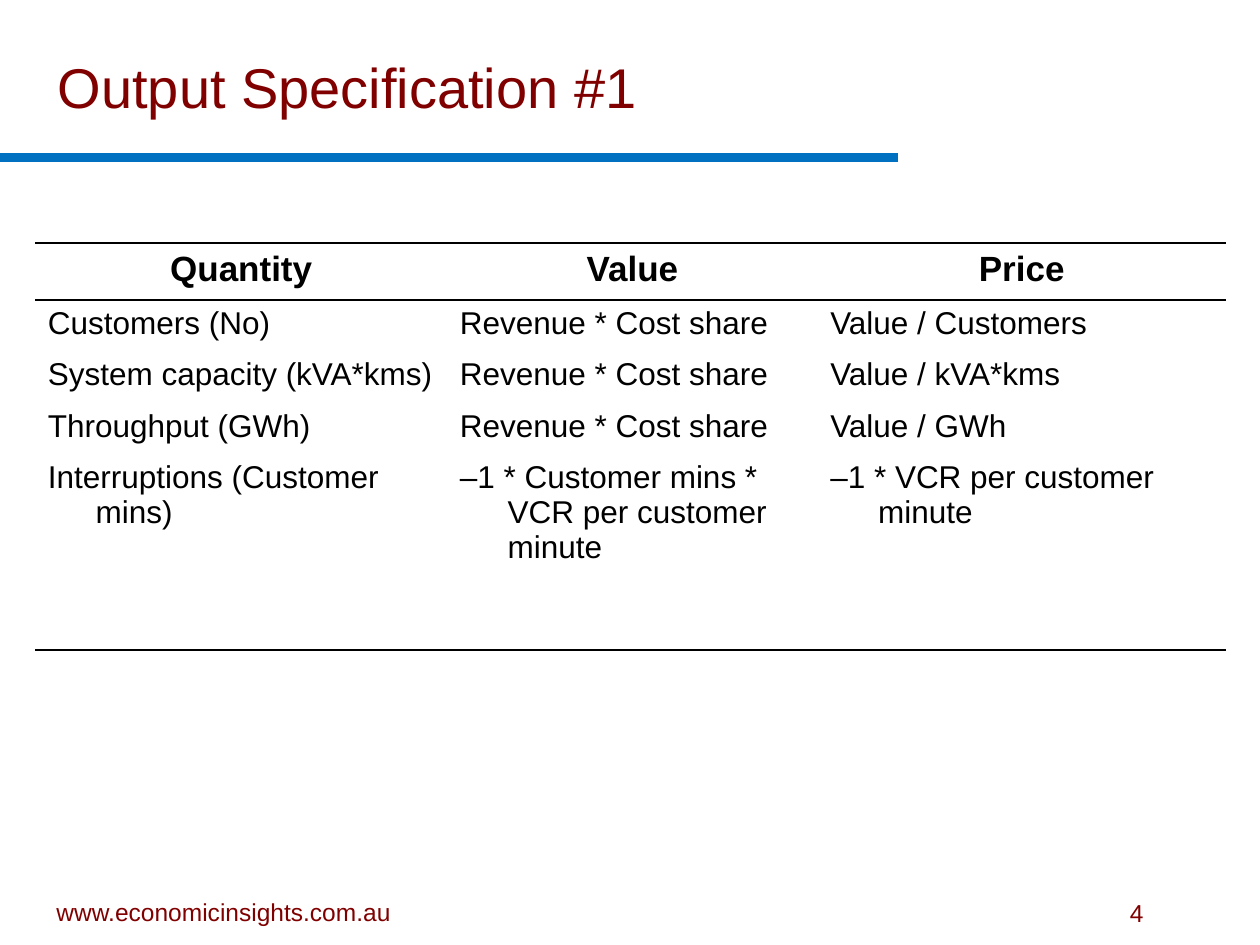
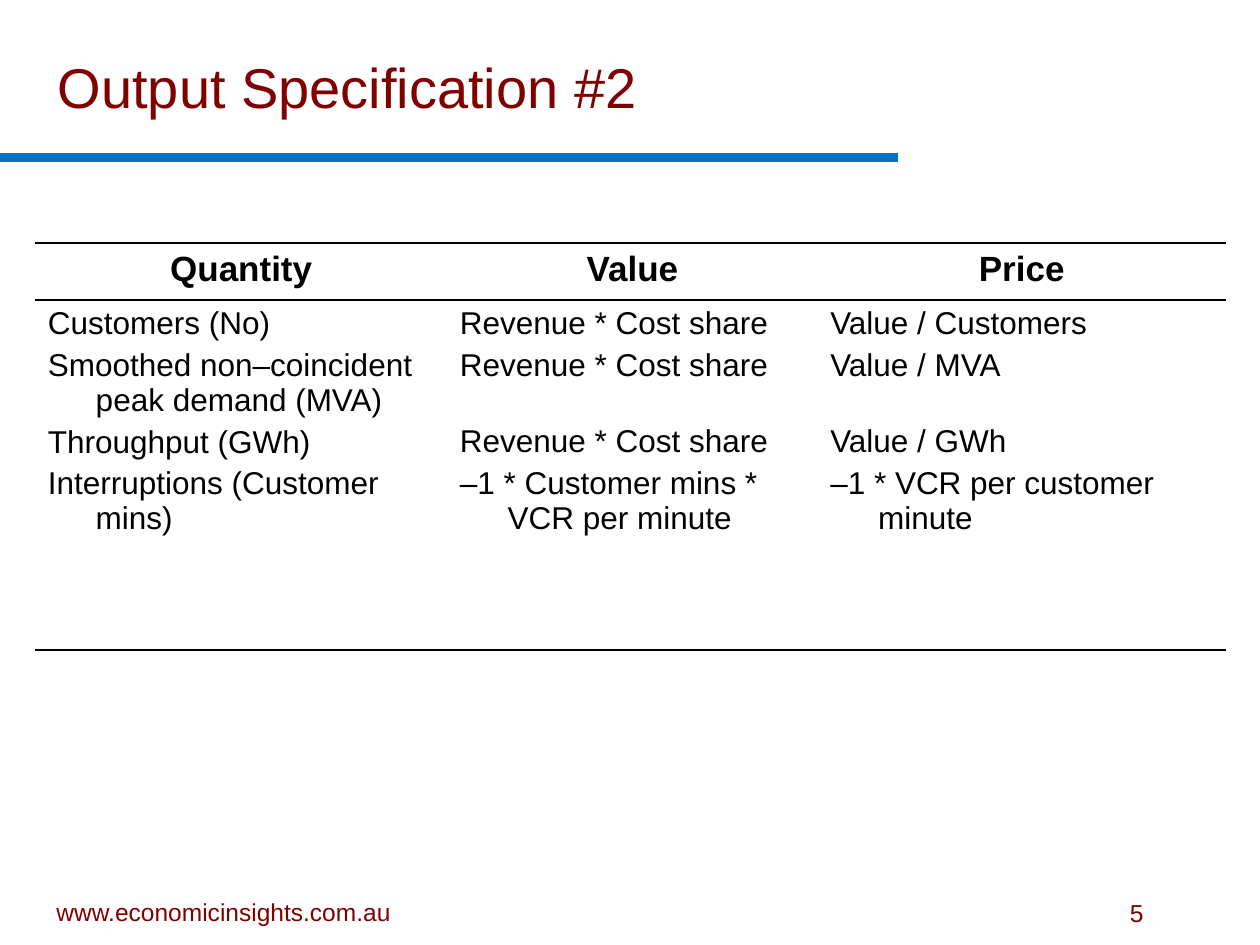
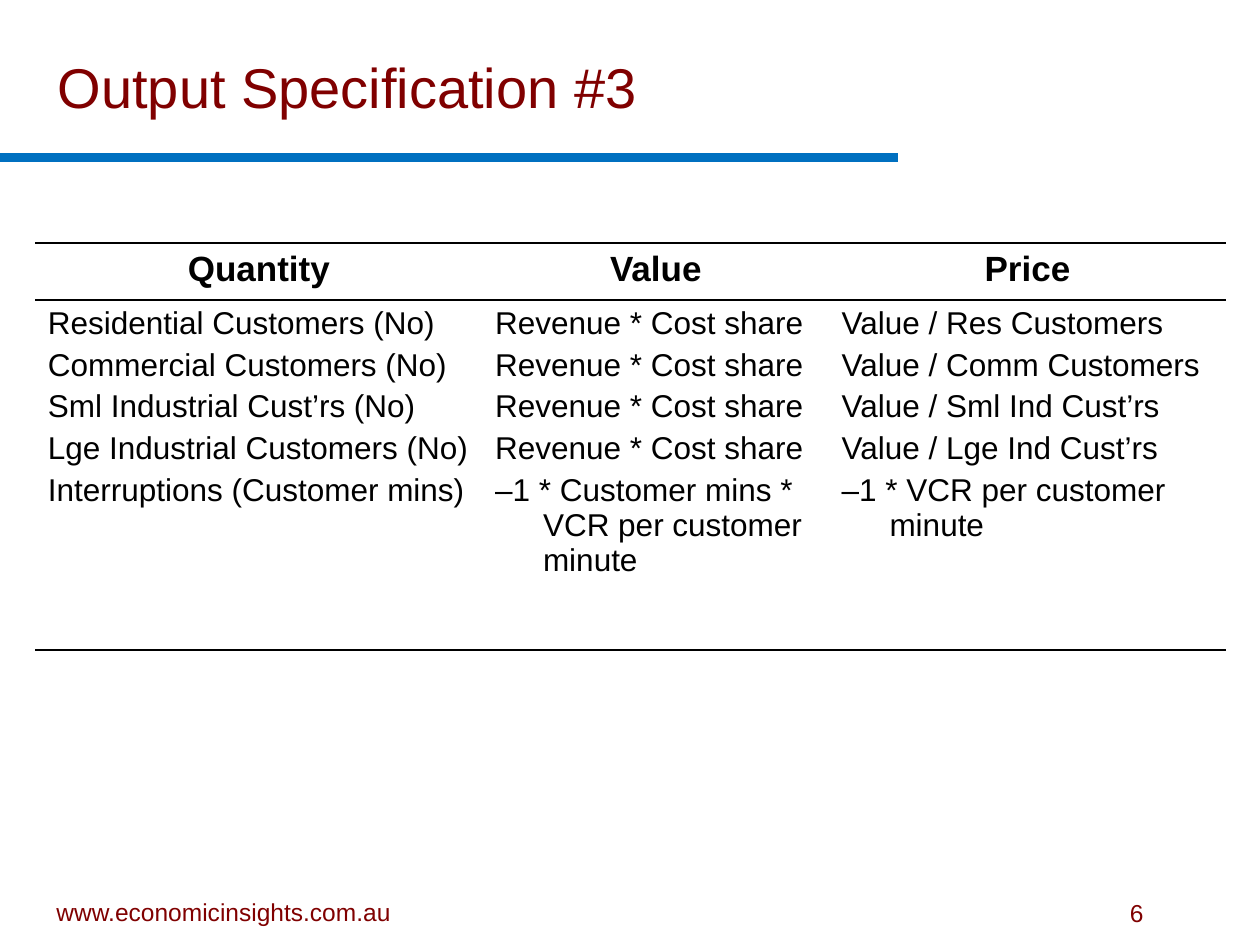
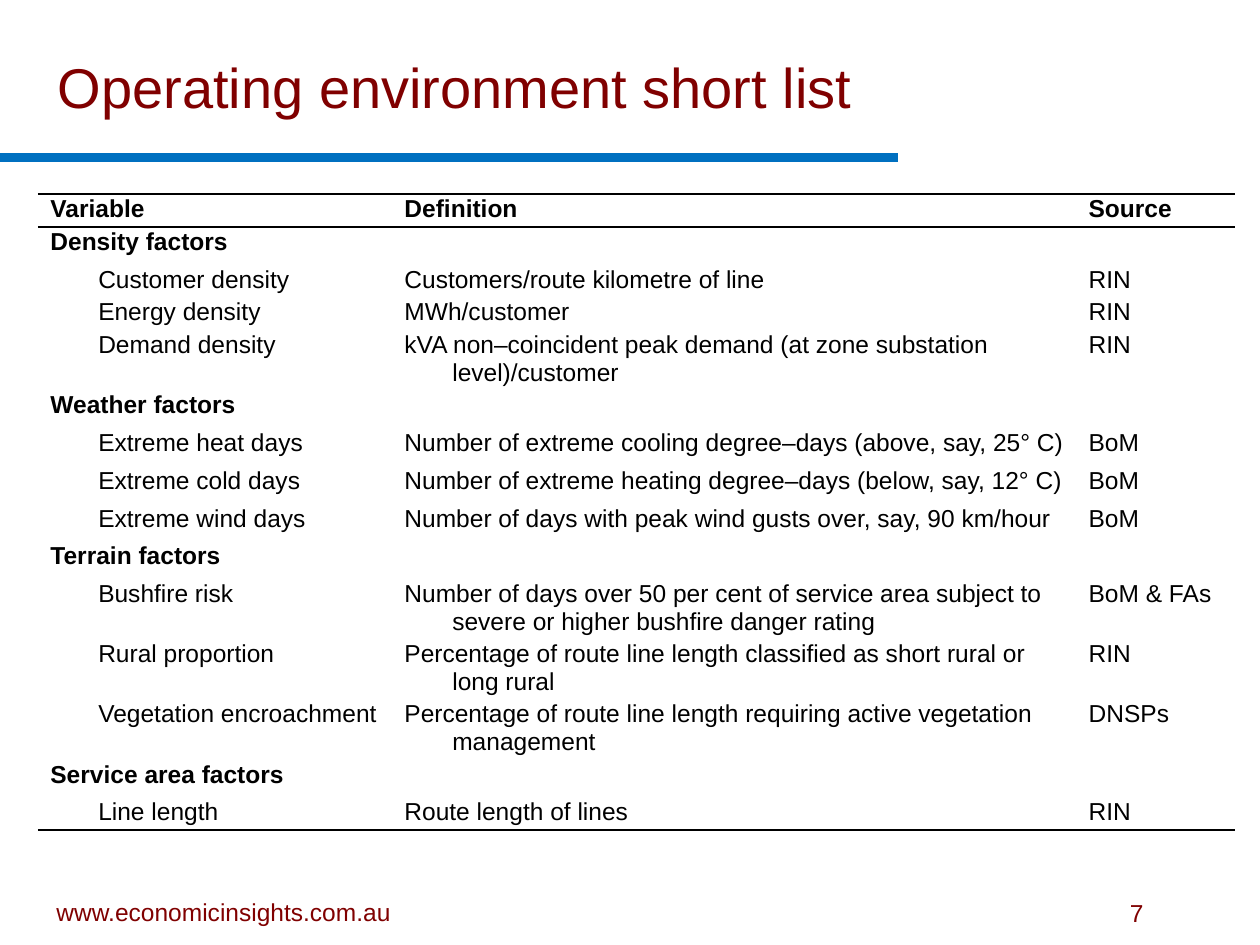
from lxml import etree
from pptx import Presentation
from pptx.dml.color import RGBColor
from pptx.enum.shapes import MSO_CONNECTOR
from pptx.enum.text import MSO_ANCHOR, PP_ALIGN
from pptx.oxml.ns import qn
from pptx.util import Inches, Pt

LEFT, MID, JUST = PP_ALIGN.LEFT, PP_ALIGN.CENTER, PP_ALIGN.JUSTIFY
LOW, TOP = MSO_ANCHOR.BOTTOM, MSO_ANCHOR.TOP
STRAIGHT = MSO_CONNECTOR.STRAIGHT

FONT = "Arial"
MAROON, BLUE, BLACK = "800000", "0070C0", "000000"
PLAIN = "{2D5ABB26-0587-4C30-8999-92F81FD0307C}"
HANG = 0.38
SITE = "www.economicinsights.com.au"
TITLE_BOX = (0.36, 0.37, 6.77, 0.63)
SITE_BOX = (0.2, 7.06, 3.15, 0.34)
PAGE_BOX = (8.87, 7.08, 0.44, 0.33)
SPEC_BOX = (0.28, 1.93, 9.45, 3.23)
LIST_BOX = (0.3, 1.54, 9.5, 5.02)
FLAT, ROOMY, TALL = 0.26, 0.3, 0.47

HEADS = ["Quantity", "Value", "Price"]
SHARE = "Revenue * Cost share"
BREAKS = "Interruptions (Customer mins)"
VCR = "–1 * VCR per customer minute"
MINS = "–1 * Customer mins * VCR per customer minute"

SPECS = [
    {"title": "Output Specification #1", "cols": [3.27, 2.94, 3.24], "gap": 9.1, "tall": None,
     "rows": [("Customers (No)", SHARE, "Value / Customers"),
              ("System capacity (kVA*kms)", SHARE, "Value / kVA*kms"),
              ("Throughput (GWh)", SHARE, "Value / GWh"),
              (BREAKS, MINS, VCR)]},
    {"title": "Output Specification #2", "cols": [3.27, 2.94, 3.24], "gap": 3.6, "tall": 1,
     "rows": [("Customers (No)", SHARE, "Value / Customers"),
              ("Smoothed non–coincident peak demand (MVA)", SHARE, "Value / MVA"),
              ("Throughput (GWh)", SHARE, "Value / GWh"),
              (BREAKS, "–1 * Customer mins * VCR per minute", VCR)]},
    {"title": "Output Specification #3", "cols": [3.55, 2.75, 3.15], "gap": 3.6, "tall": None,
     "rows": [("Residential Customers (No)", SHARE, "Value / Res Customers"),
              ("Commercial Customers (No)", SHARE, "Value / Comm Customers"),
              ("Sml Industrial Cust’rs (No)", SHARE, "Value / Sml Ind Cust’rs"),
              ("Lge Industrial Customers (No)", SHARE, "Value / Lge Ind Cust’rs"),
              (BREAKS, MINS, VCR)]},
]

FACTORS = [
    (FLAT, "Variable", "Definition", "Source"),
    (ROOMY, "Density factors", "", ""),
    (FLAT, "Customer density", "Customers/route kilometre of line", "RIN"),
    (FLAT, "Energy density", "MWh/customer", "RIN"),
    (TALL, "Demand density",
     "kVA non–coincident peak demand (at zone substation level)/customer", "RIN"),
    (ROOMY, "Weather factors", "", ""),
    (ROOMY, "Extreme heat days",
     "Number of extreme cooling degree–days (above, say, 25° C)", "BoM"),
    (ROOMY, "Extreme cold days",
     "Number of extreme heating degree–days (below, say, 12° C)", "BoM"),
    (ROOMY, "Extreme wind days",
     "Number of days with peak wind gusts over, say, 90 km/hour", "BoM"),
    (ROOMY, "Terrain factors", "", ""),
    (TALL, "Bushfire risk", "Number of days over 50 per cent of service area subject to "
     "severe or higher bushfire danger rating", "BoM & FAs"),
    (TALL, "Rural proportion",
     "Percentage of route line length classified as short rural or long rural", "RIN"),
    (TALL, "Vegetation encroachment",
     "Percentage of route line length requiring active vegetation management", "DNSPs"),
    (ROOMY, "Service area factors", "", ""),
    (FLAT, "Line length", "Route length of lines", "RIN"),
]


def paint(hue):
    """Turn a hex string into a colour."""
    return RGBColor.from_string(hue)


def style(para, size, hue, bold=False, align=LEFT):
    """Format a paragraph and its runs."""
    para.alignment = align
    for run in para.runs:
        run.font.name, run.font.size, run.font.bold = FONT, Pt(size), bold
        run.font.color.rgb = paint(hue)


def hang(para, first=-HANG):
    """Indent a paragraph, with its first line moved by the given length."""
    props = para._p.get_or_add_pPr()
    props.set("marL", str(Inches(HANG)))
    props.set("indent", str(Inches(first)))


def label(slide, box, text, size, align=LEFT, anchor=LOW, wrap=True):
    """Add a maroon text box."""
    frame = slide.shapes.add_textbox(*map(Inches, box)).text_frame
    frame.word_wrap, frame.vertical_anchor = wrap, anchor
    frame.text = text
    style(frame.paragraphs[0], size, MAROON, align=align)


def base(deck, title, page):
    """Add a slide with its band, footer and title."""
    slide = deck.slides.add_slide(deck.slide_layouts[6])
    band = slide.shapes.add_connector(
        STRAIGHT, 0, Inches(1.25), Inches(7.13), Inches(1.25))
    band.line.color.rgb, band.line.width = paint(BLUE), Pt(5)
    etree.SubElement(band._element.spPr, qn("a:effectLst"))
    label(slide, SITE_BOX, SITE, 14, align=MID)
    label(slide, PAGE_BOX, str(page), 14, anchor=TOP, wrap=False)
    label(slide, TITLE_BOX, title, 32)
    return slide


def rule(cell, sides):
    """Draw black lines on the given sides of a cell only and clear its fill."""
    props = cell._tc.get_or_add_tcPr()
    for side in "LRTB":
        line = etree.SubElement(props, qn("a:ln" + side), w=str(Pt(1.5)))
        if side in sides:
            fill = etree.SubElement(line, qn("a:solidFill"))
            etree.SubElement(fill, qn("a:srgbClr"), val=BLACK)
        else:
            etree.SubElement(line, qn("a:noFill"))
    cell.fill.background()


def grid(slide, box, cols, rows):
    """Add an unstyled table with lines round the header and at the foot."""
    table = slide.shapes.add_table(len(rows), len(cols), *map(Inches, box)).table
    table.first_row = table.horz_banding = False
    table._tbl.tblPr.find(qn("a:tableStyleId")).text = PLAIN
    for col, width in zip(table.columns, cols):
        col.width = Inches(width)
    last = len(rows) - 1
    for i, (row, height) in enumerate(zip(table.rows, rows)):
        row.height = Inches(height)
        sides = {0: "TB", 1: "T"}.get(i, "") + ("B" if i == last else "")
        for cell in row.cells:
            rule(cell, sides)
    return table


def outputs(slide, box, spec):
    """Fill a table of output quantities, values and prices."""
    table = grid(slide, box, spec["cols"], [0.45, 2.78])
    for c, (head, items) in enumerate(zip(HEADS, zip(*spec["rows"]))):
        top, body = table.cell(0, c).text_frame, table.cell(1, c).text_frame
        top.text, body.text = head, "\n".join(items)
        style(top.paragraphs[0], 20, BLACK, True, MID)
        hang(top.paragraphs[0])
        for i, para in enumerate(body.paragraphs):
            style(para, 18, BLACK)
            hang(para)
            if i:
                para.space_before = Pt(spec["gap"])
            if c and i == spec["tall"]:
                para.space_after = Pt(20)


def factors(slide, box):
    """Fill the table of operating environment factors."""
    table = grid(slide, box, [2.81, 5.43, 1.26], [row[0] for row in FACTORS])
    for r, (_, *texts) in enumerate(FACTORS):
        bold = r == 0 or not texts[1]
        for c, text in enumerate(texts):
            cell = table.cell(r, c)
            cell.margin_top, cell.margin_bottom = Inches(0.01), 0
            cell.margin_right = Inches(0.08)
            para = cell.text_frame.paragraphs[0]
            para.text = text
            style(para, 14, BLACK, bold, LEFT if r == 0 or c == 1 else JUST)
            hang(para, 0 if c == 0 and not bold else -HANG)
            if not text:
                etree.SubElement(para._p, qn("a:endParaRPr"), sz="1400")


def main():
    """Build and save the deck."""
    deck = Presentation()
    deck.slide_width, deck.slide_height = Inches(10), Inches(7.5)
    for page, spec in enumerate(SPECS, 4):
        outputs(base(deck, spec["title"], page), SPEC_BOX, spec)
    factors(base(deck, "Operating environment short list", 7), LIST_BOX)
    deck.save("out.pptx")


if __name__ == "__main__":
    main()
